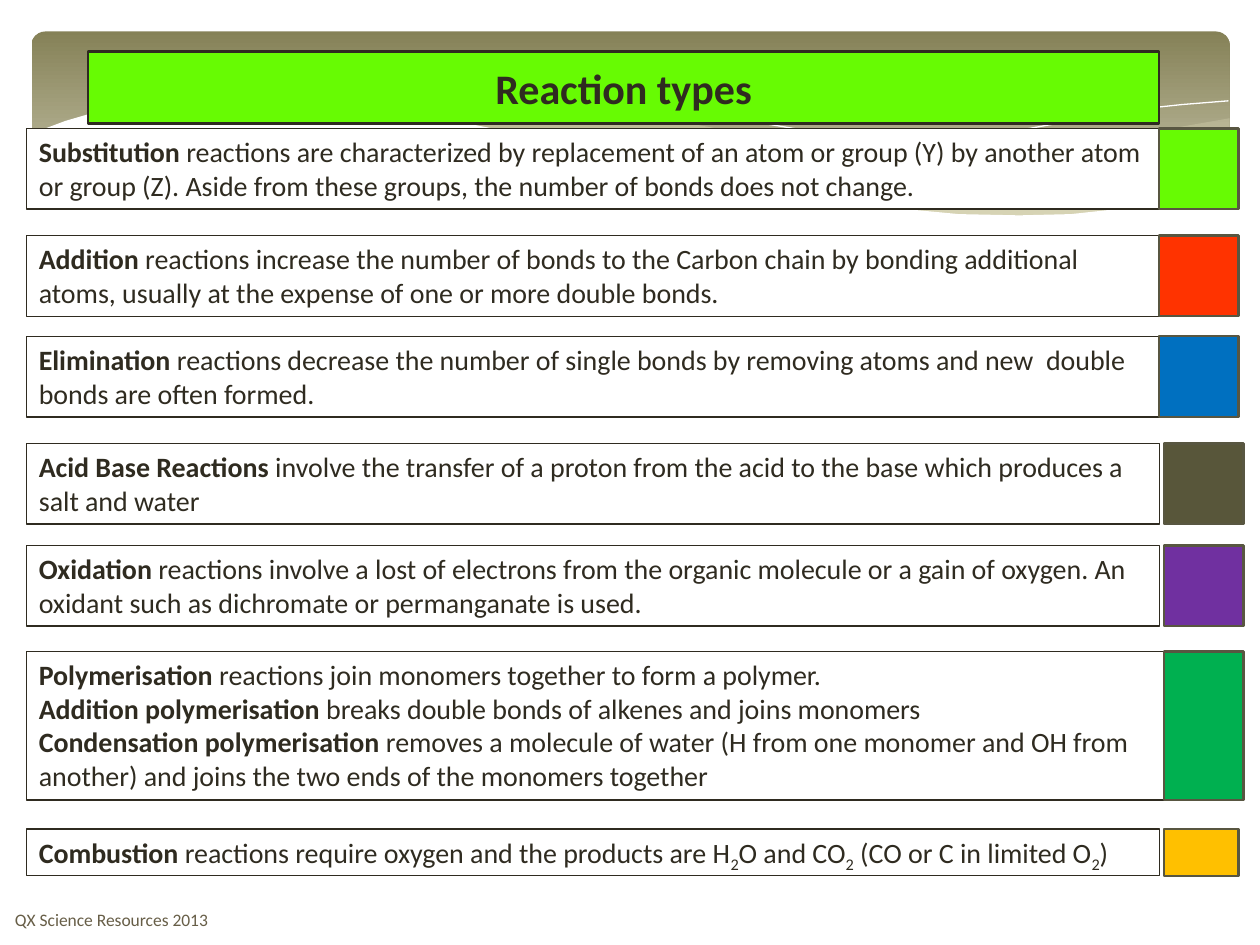
from lxml import etree
from pptx import Presentation
from pptx.dml.color import RGBColor
from pptx.enum.shapes import MSO_SHAPE as Shape
from pptx.enum.text import MSO_ANCHOR as Anchor, PP_ALIGN as Align
from pptx.oxml.ns import qn
from pptx.util import Inches, Pt

INK = RGBColor(0x2F, 0x2B, 0x20)
FOOTER_INK = RGBColor(0x67, 0x5E, 0x47)
SWATCH_EDGE = RGBColor(0x58, 0x56, 0x41)
OLIVE = RGBColor(0x85, 0x81, 0x57)
SAND = RGBColor(0xCB, 0xC9, 0xB0)
CREAM = RGBColor(0xDF, 0xDC, 0xB7)
WHITE = RGBColor(0xFF, 0xFF, 0xFF)
LIME = RGBColor(0x67, 0xFB, 0x03)
RED = RGBColor(0xFF, 0x33, 0x00)
BLUE = RGBColor(0x00, 0x70, 0xC0)
MOSS = RGBColor(0x58, 0x56, 0x3A)
PURPLE = RGBColor(0x70, 0x30, 0xA0)
GREEN = RGBColor(0x00, 0xB0, 0x50)
AMBER = RGBColor(0xFF, 0xC0, 0x00)

RIGHT_WAVE = [(9.75, 0.94), (9.35, 1.01), (8.91, 1.1), (8.32, 1.25), (7.79, 1.37),
              (7.29, 1.47), (6.61, 1.6), (7.05, 1.65), (7.45, 1.69), (7.81, 1.72),
              (8.35, 1.72), (8.72, 1.69), (9.05, 1.63), (9.35, 1.56), (9.76, 1.41),
              (9.76, 0.94)]
MIDDLE_WAVE = [(8.93, 1.67), (8.37, 1.59), (7.75, 1.49), (7.06, 1.34), (6.29, 1.16),
               (5.69, 1.02), (5.14, 0.92), (4.65, 0.86), (4.2, 0.82), (3.8, 0.8),
               (3.44, 0.8), (3.13, 0.82), (2.86, 0.86), (3.42, 0.94), (4.04, 1.06),
               (4.49, 1.16), (5.3, 1.35), (6.01, 1.5), (6.65, 1.61), (7.22, 1.68),
               (7.73, 1.72), (8.18, 1.73), (8.57, 1.71)]
LONG_CURVE = [(3.09, 0.9), (3.28, 0.86), (3.63, 0.83), (4.16, 0.81), (4.69, 0.83),
              (5.33, 0.88), (5.82, 0.94), (6.36, 1.03), (6.95, 1.14), (7.6, 1.28),
              (8.31, 1.45), (9.07, 1.66)]
SHORT_CURVE = [(6.13, 1.51), (6.53, 1.41), (6.95, 1.3), (7.48, 1.17), (8.06, 1.04),
               (8.66, 0.93), (9.1, 0.86), (9.38, 0.83), (9.75, 0.8)]
WHITE_WAVE = [(9.77, 1.41), (9.5, 1.51), (9.2, 1.59), (8.87, 1.66), (8.5, 1.7),
              (8.09, 1.71), (7.61, 1.7), (7.08, 1.65), (6.48, 1.56), (5.79, 1.44),
              (5.03, 1.28), (4.47, 1.14), (3.91, 1.02), (3.4, 0.92), (2.92, 0.85),
              (2.5, 0.81), (2.11, 0.78), (1.77, 0.78), (1.46, 0.79), (1.06, 0.83),
              (0.76, 0.89), (0.52, 0.96), (0.36, 1.02), (0.23, 1.07), (0.23, 2.24),
              (9.77, 2.24)]

REACTIONS = [
    (1.02, 0.64, 8.99, 9.2, 0.63, LIME, [
        ("Substitution", " reactions are characterized by replacement of an atom or group (Y) by "
         "another atom or group (Z). Aside from these groups, the number of bonds does not change.")]),
    (1.87, 0.64, 8.99, 9.2, 0.63, RED, [
        ("Addition", " reactions increase the number of bonds to the Carbon chain by bonding "
         "additional atoms, usually at the expense of one or more double bonds.")]),
    (2.67, 0.64, 8.99, 9.2, 0.63, BLUE, [
        ("Elimination ", "reactions decrease the number of single bonds by removing atoms and "
         "new  double bonds are often formed.")]),
    (3.52, 0.64, 8.99, 9.24, 0.63, MOSS, [
        ("Acid Base Reactions ", "involve the transfer of a proton from the acid to the base "
         "which produces a salt and water")]),
    (4.33, 0.64, 8.99, 9.24, 0.63, PURPLE, [
        ("Oxidation ", "reactions involve a lost of electrons from the organic molecule or a gain "
         "of oxygen. An oxidant such as dichromate or permanganate is used.")]),
    (5.17, 1.18, 9.03, 9.24, 0.63, GREEN, [
        ("Polymerisation ", "reactions join monomers together to form a polymer."),
        ("Addition polymerisation ", "breaks double bonds of alkenes and joins monomers"),
        ("Condensation polymerisation ", "removes a molecule of water (H from one monomer and OH "
         "from another) and joins the two ends of the monomers together")]),
    (6.58, 0.37, 8.99, 9.24, 0.59, AMBER, [
        ("Combustion ", "reactions require oxygen and the products are H_2_O and CO_2_ "
         "(CO or C in limited O_2_)")]),
]


def add_box(slide, left, top, width, height, fill, edge, weight):
    """Add a flat outlined rectangle."""
    box = slide.shapes.add_shape(
        Shape.RECTANGLE, Inches(left), Inches(top), Inches(width), Inches(height))
    box.shadow.inherit = False
    box.fill.solid()
    box.fill.fore_color.rgb = fill
    box.line.color.rgb = edge
    box.line.width = Pt(weight)
    return box


def style(run, size, color, bold=False):
    """Set the font of a run."""
    run.font.name = "Calibri"
    run.font.size = Pt(size)
    run.font.color.rgb = color
    run.font.bold = bold


def add_outline(slide, points, closed):
    """Add a flat freeform through points given in inches."""
    start, *rest = [(Inches(x), Inches(y)) for x, y in points]
    builder = slide.shapes.build_freeform(*start)
    builder.add_line_segments(rest, close=closed)
    outline = builder.convert_to_shape()
    outline.shadow.inherit = False
    return outline


def add_wave(slide, points, color, opacity):
    """Add a filled wave with an opacity in percent."""
    wave = add_outline(slide, points, True)
    wave.fill.solid()
    wave.fill.fore_color.rgb = color
    wave.line.fill.background()
    if opacity < 100:
        tint = wave.fill._xPr.find(qn("a:solidFill"))[0]
        etree.SubElement(tint, qn("a:alpha")).set("val", str(opacity * 1000))


def add_banner(slide, left, top, width, height):
    """Draw the gradient band with its waves."""
    band = slide.shapes.add_shape(
        Shape.ROUNDED_RECTANGLE, Inches(left), Inches(top), Inches(width), Inches(height))
    band.adjustments[0] = 0.07
    band.shadow.inherit = False
    band.line.fill.background()
    band.fill.gradient()
    band.fill.gradient_angle = 270
    for stop, color, position in zip(band.fill.gradient_stops, (OLIVE, SAND), (0, 0.9)):
        stop.color.rgb = color
        stop.position = position
    add_wave(slide, RIGHT_WAVE, CREAM, 29)
    add_wave(slide, MIDDLE_WAVE, CREAM, 40)
    for points in (LONG_CURVE, SHORT_CURVE):
        curve = add_outline(slide, points, False)
        curve.fill.background()
        curve.line.color.rgb = WHITE
        curve.line.width = Pt(0)
    add_wave(slide, WHITE_WAVE, WHITE, 100)


def add_title(slide, left, top, width, height):
    """Add the title bar."""
    title = add_box(slide, left, top, width, height, LIME, INK, 1.5)
    title.text_frame.text = "Reaction types"
    heading = title.text_frame.paragraphs[0]
    heading.alignment = Align.CENTER
    style(heading.runs[0], 24, INK, True)


def add_reaction(slide, left, top, width, height, statements):
    """Add one reaction box; underscores enclose subscripts."""
    reaction = add_box(slide, left, top, width, height, WHITE, INK, 0.75)
    frame = reaction.text_frame
    frame.word_wrap = True
    frame.vertical_anchor = Anchor.TOP
    for index, (term, meaning) in enumerate(statements):
        statement = frame.add_paragraph() if index else frame.paragraphs[0]
        statement.alignment = Align.LEFT
        for position, piece in enumerate([term] + meaning.split("_")):
            run = statement.add_run()
            run.text = piece
            style(run, 16, INK, position == 0)
            if position and position % 2 == 0:
                run.font._element.set("baseline", "-25000")


def add_footer(slide, left, top, width, height):
    """Add the source line."""
    footer = slide.shapes.add_textbox(
        Inches(left), Inches(top), Inches(width), Inches(height))
    footer.text_frame.word_wrap = True
    footer.text_frame.vertical_anchor = Anchor.MIDDLE
    footer.text_frame.text = "QX Science Resources 2013"
    style(footer.text_frame.paragraphs[0].runs[0], 10, FOOTER_INK)


def main():
    """Build and save the slide."""
    deck = Presentation()
    deck.slide_width, deck.slide_height = Inches(10), Inches(7.5)
    slide = deck.slides.add_slide(deck.slide_layouts[6])
    add_banner(slide, 0.25, 0.25, 9.51, 1.56)
    add_title(slide, 0.7, 0.41, 8.5, 0.57)
    for top, height, width, swatch_left, swatch_width, color, statements in REACTIONS:
        add_reaction(slide, 0.21, top, width, height, statements)
        add_box(slide, swatch_left, top, swatch_width, height, color, SWATCH_EDGE, 1.25)
    add_footer(slide, 0.02, 7.1, 4.14, 0.4)
    deck.save("out.pptx")


if __name__ == "__main__":
    main()
